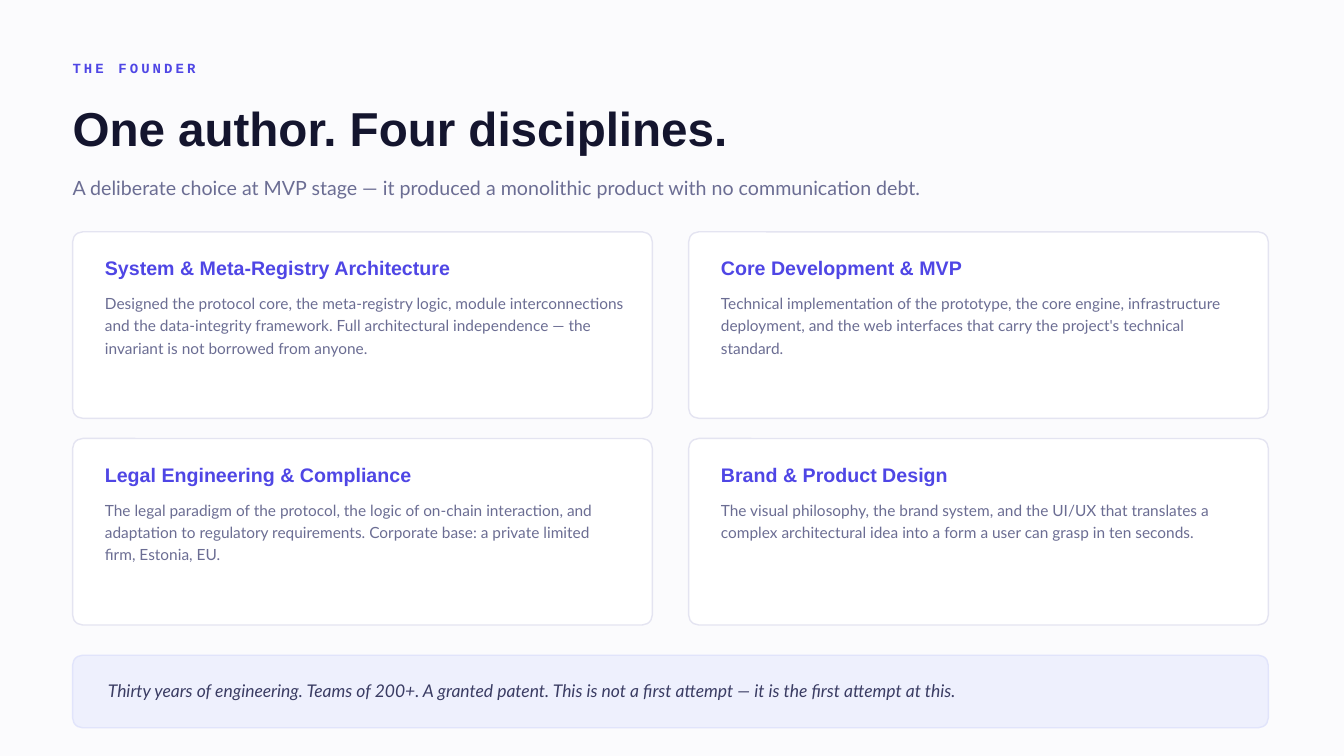
"""Build the founder slide: a heading, four discipline cards and a closing quote."""
from dataclasses import dataclass
from typing import Optional

from pptx import Presentation
from pptx.dml.color import RGBColor
from pptx.enum.shapes import MSO_SHAPE as Shape
from pptx.enum.text import MSO_ANCHOR as Anchor, MSO_AUTO_SIZE as AutoSize, PP_ALIGN as Align
from pptx.util import Emu, Pt

EMU_PER_PX = 9144


@dataclass(frozen=True)
class Style:
    font: str
    size: float
    color: str
    bold: bool = False
    italic: bool = False
    tracking: Optional[int] = None
    leading: Optional[int] = None
    anchor: Anchor = Anchor.MIDDLE


@dataclass(frozen=True)
class Theme:
    background: str = "FBFBFD"
    card_fill: str = "FFFFFF"
    card_line: str = "E4E4F1"
    quote_fill: str = "EEF0FD"
    quote_line: str = "E1E4FB"
    eyebrow: Style = Style("Courier New", 10, "4F46E5", bold=True, tracking=220)
    title: Style = Style("Arial", 34, "14152E", bold=True)
    subtitle: Style = Style("Lato", 14, "6B6D93")
    card_title: Style = Style("Arial", 14, "4F46E5", bold=True)
    card_body: Style = Style("Lato", 11, "6B6D93", leading=16, anchor=Anchor.TOP)
    quote: Style = Style("Lato", 12.5, "3A3C63", italic=True)


@dataclass(frozen=True)
class Box:
    x: int
    y: int
    w: int
    h: int

    def emu(self) -> tuple:
        return tuple(px(v) for v in (self.x, self.y, self.w, self.h))


@dataclass(frozen=True)
class Card:
    title: str
    body: str


THEME = Theme()
MARGIN, CARDS_TOP = 72, 230
CARD_W, CARD_H = 575, 185
COLUMN_STEP, ROW_STEP = 611, 205
CORNER = 10

CARDS = [
    Card("System & Meta-Registry Architecture",
         "Designed the protocol core, the meta-registry logic, module interconnections "
         "and the data-integrity framework. Full architectural independence — the "
         "invariant is not borrowed from anyone."),
    Card("Core Development & MVP",
         "Technical implementation of the prototype, the core engine, infrastructure "
         "deployment, and the web interfaces that carry the project's technical standard."),
    Card("Legal Engineering & Compliance",
         "The legal paradigm of the protocol, the logic of on-chain interaction, and "
         "adaptation to regulatory requirements. Corporate base: a private limited firm, "
         "Estonia, EU."),
    Card("Brand & Product Design",
         "The visual philosophy, the brand system, and the UI/UX that translates a "
         "complex architectural idea into a form a user can grasp in ten seconds."),
]


def px(value: int) -> Emu:
    return Emu(value * EMU_PER_PX)


def rgb(color: str) -> RGBColor:
    return RGBColor.from_string(color)


def write(sp, text: str, style: Style) -> None:
    tf = sp.text_frame
    tf.text = text
    tf.word_wrap = True
    tf.auto_size = AutoSize.NONE
    tf.vertical_anchor = style.anchor
    tf.margin_left = tf.margin_right = tf.margin_top = tf.margin_bottom = 0
    p = tf.paragraphs[0]
    p.alignment = Align.LEFT
    if style.leading:
        p.line_spacing = Pt(style.leading)
    r = p.runs[0]
    r.font.name, r.font.size = style.font, Pt(style.size)
    r.font.bold, r.font.italic = style.bold, style.italic
    r.font.color.rgb = rgb(style.color)
    if style.tracking:
        r.font._element.set("spc", str(style.tracking))


def add_text(s, box: Box, text: str, style: Style) -> None:
    write(s.shapes.add_textbox(*box.emu()), text, style)


def add_panel(s, box: Box, fill: str, line: str) -> None:
    sp = s.shapes.add_shape(Shape.ROUNDED_RECTANGLE, *box.emu())
    sp.adjustments[0] = CORNER / box.h
    sp.shadow.inherit = False
    sp.fill.solid()
    sp.fill.fore_color.rgb = rgb(fill)
    sp.line.color.rgb = rgb(line)
    sp.line.width = Pt(1)


def add_card(s, x: int, y: int, card: Card) -> None:
    add_panel(s, Box(x, y, CARD_W, CARD_H), THEME.card_fill, THEME.card_line)
    add_text(s, Box(x + 32, y + 20, 510, 32), card.title, THEME.card_title)
    add_text(s, Box(x + 32, y + 58, 515, 110), card.body, THEME.card_body)


def add_heading(s) -> None:
    add_text(s, Box(MARGIN, 55, 800, 24), "THE FOUNDER", THEME.eyebrow)
    title = s.shapes.title
    title.left, title.top, title.width, title.height = Box(MARGIN, 90, 1190, 72).emu()
    write(title, "One author. Four disciplines.", THEME.title)
    add_text(s, Box(MARGIN, 168, 1160, 36),
             "A deliberate choice at MVP stage — it produced a monolithic product "
             "with no communication debt.", THEME.subtitle)


def add_quote(s) -> None:
    add_panel(s, Box(MARGIN, 650, COLUMN_STEP + CARD_W, 72), THEME.quote_fill, THEME.quote_line)
    add_text(s, Box(MARGIN + 35, 660, 1120, 50),
             "Thirty years of engineering. Teams of 200+. A granted patent. "
             "This is not a first attempt — it is the first attempt at this.", THEME.quote)


def main() -> None:
    prs = Presentation()
    prs.slide_width, prs.slide_height = px(1333), px(750)
    s = prs.slides.add_slide(prs.slide_layouts.get_by_name("Title Only"))
    s.background.fill.solid()
    s.background.fill.fore_color.rgb = rgb(THEME.background)
    add_heading(s)
    for i, card in enumerate(CARDS):
        row, column = divmod(i, 2)
        add_card(s, MARGIN + column * COLUMN_STEP, CARDS_TOP + row * ROW_STEP, card)
    add_quote(s)
    prs.save("out.pptx")


if __name__ == "__main__":
    main()
